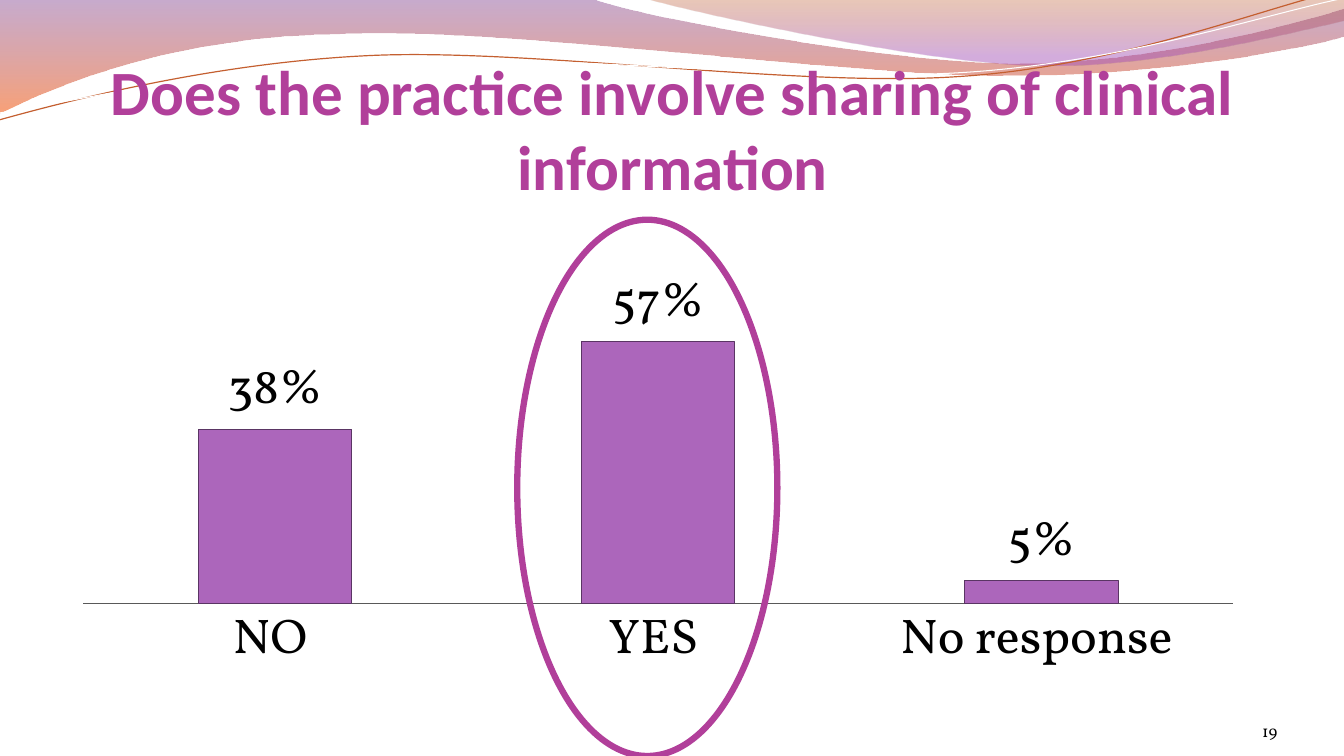
from lxml import etree
from pptx import Presentation
from pptx.chart.data import CategoryChartData
from pptx.dml.color import RGBColor
from pptx.enum.chart import XL_CHART_TYPE as ChartType, XL_LABEL_POSITION as LabelPosition, XL_TICK_MARK as TickMark
from pptx.enum.shapes import MSO_SHAPE as Shape
from pptx.enum.text import MSO_ANCHOR as Anchor, MSO_AUTO_SIZE as AutoSize, PP_ALIGN as Align
from pptx.oxml import parse_xml
from pptx.oxml.ns import nsdecls, qn
from pptx.util import Inches, Pt


def color(hex_value):
    return RGBColor.from_string(hex_value)


def write_text(frame, text, size, font, hex_value, align, bold=False, insets=(0, 0, 0, 0)):
    frame.word_wrap = True
    frame.auto_size = AutoSize.NONE
    frame.vertical_anchor = Anchor.BOTTOM
    frame.margin_left, frame.margin_top, frame.margin_right, frame.margin_bottom = map(Inches, insets)
    paragraph = frame.paragraphs[0]
    paragraph.alignment = align
    run = paragraph.add_run()
    run.text = text
    run.font.size, run.font.name, run.font.bold = Pt(size), font, bold
    run.font.color.rgb = color(hex_value)


def bend(shape, segments):
    lines = iter(list(shape.element.iter(qn("a:lnTo"))))
    for segment in segments:
        line = next(lines)
        if len(segment) == 6:
            line.addprevious(curve := etree.Element(qn("a:cubicBezTo")))
            for corner in (line, next(lines), next(lines)):
                curve.append(corner[0])
                corner.getparent().remove(corner)


class SlideBuilder:
    """Holds the slide and its style, and adds each kind of element."""

    accent = "B13F9A"
    bar_fill = "AC66BB"
    ink = "000000"
    paper = "FFFFFF"
    heading_font = "Calibri"
    body_font = "Vollkorn"

    def __init__(self, presentation):
        self.slide = presentation.slides.add_slide(presentation.slide_layouts[5])
        self.shapes = self.slide.shapes

    def outline(self, shape, hex_value, width):
        shape.fill.background()
        shape.line.color.rgb = color(hex_value)
        shape.line.width = Pt(width)

    def freeform(self, start, segments, close):
        points = [(Inches(segment[i]), Inches(segment[i + 1]))
                  for segment in segments for i in range(0, len(segment), 2)]
        builder = self.shapes.build_freeform(*map(Inches, start), scale=1.0)
        builder.add_line_segments(points, close=close)
        shape = builder.convert_to_shape()
        shape.shadow.inherit = False
        bend(shape, segments)
        return shape

    def wave(self, start, segments, stops):
        shape = self.freeform(start, segments, True)
        shape.line.fill.background()
        shape.fill.gradient()
        shape.fill.gradient_angle = 270
        for stop, (position, hex_value, _) in zip(shape.fill.gradient_stops, stops):
            stop.position = position
            stop.color.rgb = color(hex_value)
        for tag, (_, _, opacity) in zip(shape.element.iter(qn("a:srgbClr")), stops):
            etree.SubElement(tag, qn("a:alpha")).set("val", str(opacity * 1000))

    def strand(self, start, segments, hex_value, width):
        self.outline(self.freeform(start, segments, False), hex_value, width)

    def preset(self, kind, box):
        shape = self.shapes.add_shape(kind, *map(Inches, box))
        shape.shadow.inherit = False
        return shape

    def panel(self, box):
        shape = self.preset(Shape.RECTANGLE, box)
        shape.fill.solid()
        shape.fill.fore_color.rgb = color(self.paper)
        shape.line.fill.background()

    def ring(self, box):
        self.outline(self.preset(Shape.OVAL, box), self.accent, 4.5)

    def title(self, text, box):
        title = self.shapes.title
        title.left, title.top, title.width, title.height = map(Inches, box)
        write_text(title.text_frame, text, 45, self.heading_font, self.accent, Align.CENTER,
                   bold=True, insets=(0, 0.05, 0, 0))
        title.element.getparent().append(title.element)

    def page_number(self, text, box):
        frame = self.shapes.add_textbox(*map(Inches, box)).text_frame
        write_text(frame, text, 12, self.body_font, self.ink, Align.RIGHT)

    def column_chart(self, answers, box):
        data = CategoryChartData(number_format="0%")
        data.categories = list(answers)
        data.add_series("Series 1", list(answers.values()))
        chart = self.shapes.add_chart(ChartType.COLUMN_CLUSTERED, *map(Inches, box), data).chart
        chart.has_legend = chart.has_title = False
        chart.font.size, chart.font.name = Pt(36), self.body_font
        chart.font.color.rgb = color(self.ink)

        value_axis, category_axis = chart.value_axis, chart.category_axis
        value_axis.minimum_scale, value_axis.maximum_scale = 0, 0.69
        value_axis.has_major_gridlines = value_axis.visible = False
        category_axis.major_tick_mark = TickMark.NONE
        category_axis.format.line.color.rgb = color("595959")
        category_axis.format.line.width = Pt(0.75)

        plot = chart.plots[0]
        plot.gap_width, plot.vary_by_categories = 150, False
        series = plot.series[0]
        series.format.fill.solid()
        series.format.fill.fore_color.rgb = color(self.bar_fill)
        series.format.line.color.rgb = color("5A3564")
        series.format.line.width = Pt(0.75)
        plot.has_data_labels = True
        labels = plot.data_labels
        labels.show_value = True
        labels.number_format, labels.number_format_is_linked = "0%", False
        labels.position = LabelPosition.OUTSIDE_END
        self.place_plot(chart, x=0.02, y=0.01, w=0.96, h=0.81)

    def place_plot(self, chart, **fractions):
        plot_area = chart.element.find(".//" + qn("c:plotArea"))
        for old_layout in plot_area.findall(qn("c:layout")):
            plot_area.remove(old_layout)
        modes = '<c:layoutTarget val="inner"/><c:xMode val="edge"/><c:yMode val="edge"/>'
        sizes = "".join(f'<c:{name} val="{value}"/>' for name, value in fractions.items())
        plot_area.insert(0, parse_xml(
            f'<c:layout {nsdecls("c")}><c:manualLayout>{modes}{sizes}</c:manualLayout></c:layout>'))


def main():
    presentation = Presentation()
    presentation.slide_width, presentation.slide_height = Inches(13.33), Inches(7.5)
    builder = SlideBuilder(presentation)
    builder.wave((0, 0), [
        (5.87, -0.01), (6.34, 0.17, 8.85, 0.63, 10.11, 0.63), (11.38, 0.63, 12.78, 0.26, 13.33, 0.09),
        (13.35, 0.36), (13.11, 0.44, 11.6, 0.76, 9.94, 0.75), (8.29, 0.75, 5.09, 0.28, 3.43, 0.34),
        (1.72, 0.36, 0.61, 0.83, -0.01, 1.13), (0, 0),
    ], [(0, "834591", 45), (1, "F35307", 55)])
    builder.wave((6.39, -0.01), [
        (6.79, 0.11, 9.09, 0.62, 10.25, 0.65), (11.41, 0.69, 12.82, 0.32, 13.33, 0.21),
        (13.33, 0), (6.39, -0.01),
    ], [(0, "B74915", 30), (0.8, "A14BB4", 45)])
    builder.strand((-0.01, 1.19), [
        (0.64, 1.01, 2.11, 0.62, 3.69, 0.55), (5.27, 0.48, 7.9, 0.87, 9.5, 0.76),
        (11.1, 0.66, 12.52, 0.08, 13.31, -0.1),
    ], "C45F30", 0.85)
    builder.strand((0, 1.12), [
        (0.63, 1.03, 2.18, 0.66, 3.78, 0.59), (5.37, 0.53, 7.96, 0.82, 9.55, 0.72),
        (11.15, 0.62, 12.55, 0.14, 13.34, -0.02),
    ], builder.paper, 0.75)
    builder.panel((0, 1.21, 3.07, 6.29))
    builder.title("Does the practice involve sharing of clinical information", (0.67, 0.77, 12, 1.25))
    builder.page_number("19", (11.56, 6.95, 1.11, 0.4))
    builder.column_chart({"NO ": 0.38, "YES ": 0.57, "No response ": 0.05}, (0.59, 2.68, 11.88, 4.02))
    builder.ring((5.13, 2.18, 2.58, 5.32))
    presentation.save("out.pptx")


if __name__ == "__main__":
    main()
